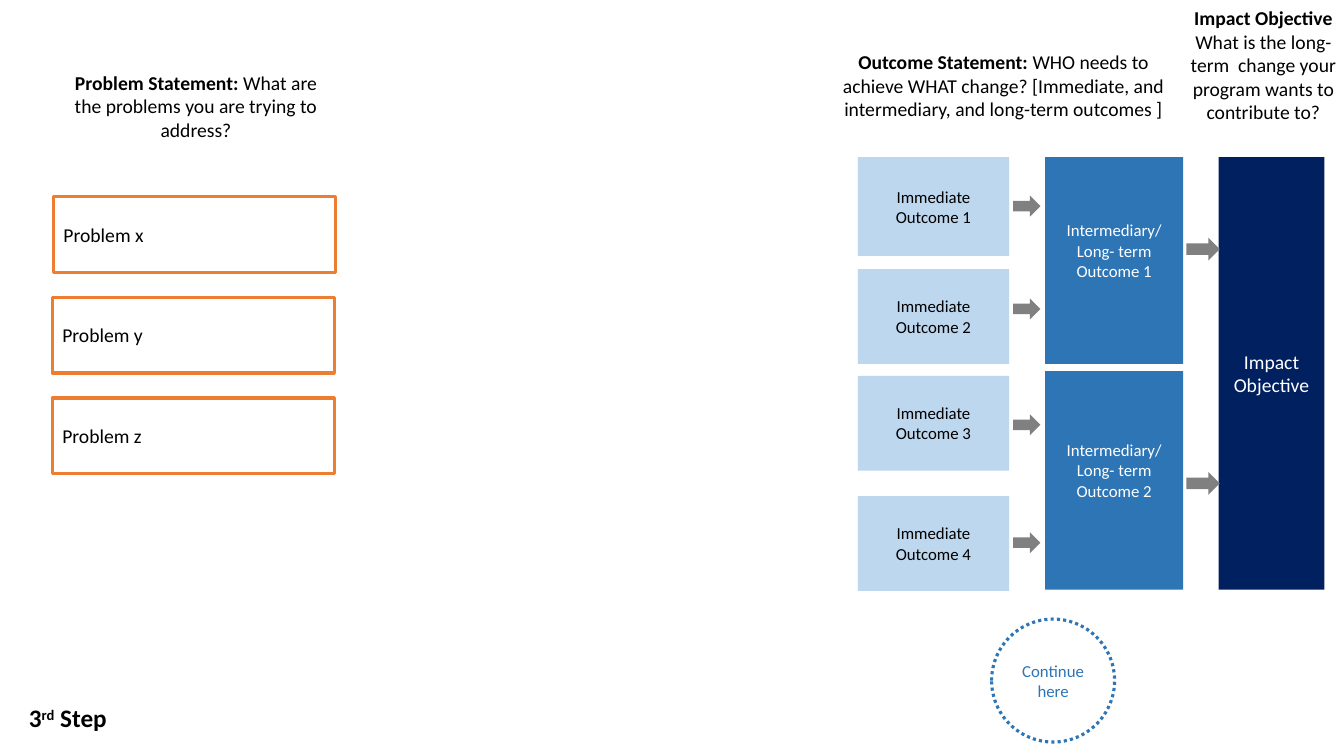
from dataclasses import dataclass
from typing import Optional

import pptx
import pptx.dml.color
import pptx.enum.dml
import pptx.enum.shapes
import pptx.enum.text
import pptx.slide
import pptx.text.text
import pptx.util

Cm = pptx.util.Cm
Kind = pptx.enum.shapes.MSO_SHAPE
Align = pptx.enum.text.PP_ALIGN
Anchor = pptx.enum.text.MSO_ANCHOR


@dataclass(frozen=True)
class Theme:
    font: str = "Calibri"
    black: str = "000000"
    white: str = "FFFFFF"
    pale_blue: str = "BDD7EE"
    blue: str = "2E75B6"
    navy: str = "002060"
    orange: str = "ED7D31"
    grey: str = "808080"
    small: float = 12
    body: float = 14
    step: float = 18
    border: float = 2.25


THEME = Theme()


@dataclass(frozen=True)
class Frame:
    """Left, top, width and height in centimetres."""
    left: float
    top: float
    width: float
    height: float

    def lengths(self) -> list[pptx.util.Length]:
        return [Cm(value) for value in (self.left, self.top, self.width, self.height)]


@dataclass(frozen=True)
class Span:
    text: str
    bold: bool = False
    raised: bool = False


@dataclass(frozen=True)
class Box:
    frame: Frame
    text: str = ""
    kind: Kind = Kind.RECTANGLE
    fill: Optional[str] = None
    line: Optional[str] = None
    dotted: bool = False
    ink: str = THEME.black
    size: float = THEME.small
    align: Align = Align.CENTER
    bottom_inset: float = 0.13


@dataclass(frozen=True)
class Caption:
    frame: Frame
    spans: tuple[Span, ...]
    size: float = THEME.body
    align: Align = Align.CENTER


def rgb(code: str) -> pptx.dml.color.RGBColor:
    return pptx.dml.color.RGBColor.from_string(code)


def write_spans(para: pptx.text.text._Paragraph, spans: tuple[Span, ...],
                size: float, ink: str, align: Align) -> None:
    para.alignment = align
    for item in spans:
        span = para.add_run()
        span.text = item.text
        span.font.name = THEME.font
        span.font.size = pptx.util.Pt(size)
        span.font.bold = item.bold
        span.font.color.rgb = rgb(ink)
        if item.raised:
            span._r.get_or_add_rPr().set("baseline", "30000")


def draw_box(page: pptx.slide.Slide, box: Box) -> None:
    shape = page.shapes.add_shape(box.kind, *box.frame.lengths())
    shape.shadow.inherit = False
    if box.fill:
        shape.fill.solid()
        shape.fill.fore_color.rgb = rgb(box.fill)
    else:
        shape.fill.background()
    if box.line:
        shape.line.color.rgb = rgb(box.line)
        shape.line.width = pptx.util.Pt(THEME.border)
        if box.dotted:
            shape.line.dash_style = pptx.enum.dml.MSO_LINE.ROUND_DOT
    else:
        shape.line.fill.background()
    if box.text:
        frame = shape.text_frame
        frame.word_wrap = True
        frame.vertical_anchor = Anchor.MIDDLE
        frame.margin_bottom = Cm(box.bottom_inset)
        write_spans(frame.paragraphs[0], (Span(box.text),), box.size, box.ink, box.align)


def draw_caption(page: pptx.slide.Slide, caption: Caption) -> None:
    frame = page.shapes.add_textbox(*caption.frame.lengths()).text_frame
    frame.word_wrap = True
    write_spans(frame.paragraphs[0], caption.spans, caption.size, THEME.black, caption.align)


# Outcome chain: immediate, intermediary, impact
IMMEDIATE = [
    Box(Frame(21.62, top, 3.81, height), f"Immediate Outcome {number}", fill=THEME.pale_blue)
    for number, (top, height) in enumerate(
        [(3.96, 2.49), (6.78, 2.39), (9.47, 2.39), (12.5, 2.39)], start=1)
]
INTERMEDIARY = [
    Box(Frame(26.34, top, 3.48, height), f"Intermediary/ Long- term Outcome {number}",
        fill=THEME.blue, ink=THEME.white, bottom_inset=0.64)
    for number, (top, height) in enumerate([(3.96, 5.21), (9.35, 5.51)], start=1)
]
IMPACT = Box(Frame(30.71, 3.96, 2.67, 10.9), "Impact Objective",
             fill=THEME.navy, ink=THEME.white, size=THEME.body)

# Arrows between the columns
ARROWS = [
    Box(frame, kind=Kind.RIGHT_ARROW, fill=THEME.grey)
    for frame in [
        *(Frame(25.53, top, 0.69, 0.53) for top in (4.93, 7.52, 10.44, 13.41)),
        *(Frame(29.9, top, 0.84, 0.58) for top in (5.99, 11.89)),
    ]
]

# Problem list and the marker for the next step
PROBLEMS = [
    Box(Frame(left, 4.95 + 2.54 * row, 7.11, 1.91), f"Problem {letter}",
        line=THEME.orange, size=THEME.body, align=Align.LEFT)
    for row, (letter, left) in enumerate([("x", 1.35), ("y", 1.32), ("z", 1.32)])
]
CONTINUE = Box(Frame(24.99, 15.6, 3.1, 3.1), "Continue here", kind=Kind.OVAL,
               line=THEME.blue, dotted=True, ink=THEME.blue)

# Headings and step label
CAPTIONS = [
    Caption(Frame(0.48, 17.58, 2.95, 1.02),
            (Span("3", True), Span("rd", True, raised=True), Span(" Step", True)),
            THEME.step, Align.LEFT),
    Caption(Frame(20.68, 1.14, 9.22, 2.06),
            (Span("Outcome Statement: ", True),
             Span("WHO needs to achieve WHAT change? "
                  "[Immediate, and intermediary, and long-term outcomes ]"))),
    Caption(Frame(1.37, 1.65, 7.14, 2.64),
            (Span("Problem Statement: ", True),
             Span("What are the problems you are trying to address?"))),
    Caption(Frame(29.39, 0.03, 4.9, 3.25),
            (Span("Impact Objective ", True),
             Span("What is the long-term  change your program wants to contribute to?"))),
]


def main() -> None:
    deck = pptx.Presentation()
    deck.slide_width, deck.slide_height = Cm(33.87), Cm(19.05)
    page = deck.slides.add_slide(deck.slide_layouts[6])
    for box in [*IMMEDIATE, *INTERMEDIARY, IMPACT, *ARROWS, CONTINUE, *PROBLEMS]:
        draw_box(page, box)
    for caption in CAPTIONS:
        draw_caption(page, caption)
    deck.save("out.pptx")


if __name__ == "__main__":
    main()
